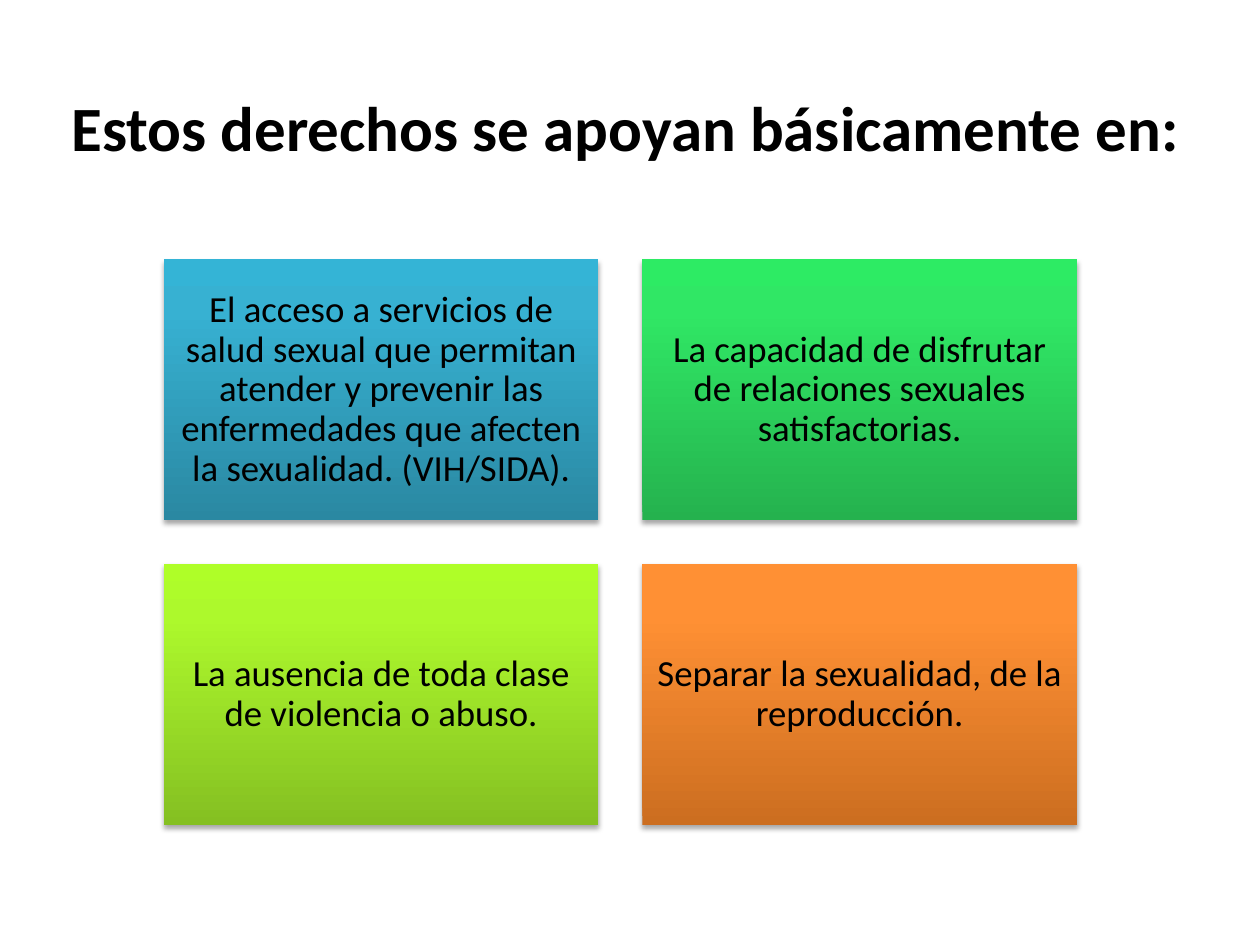
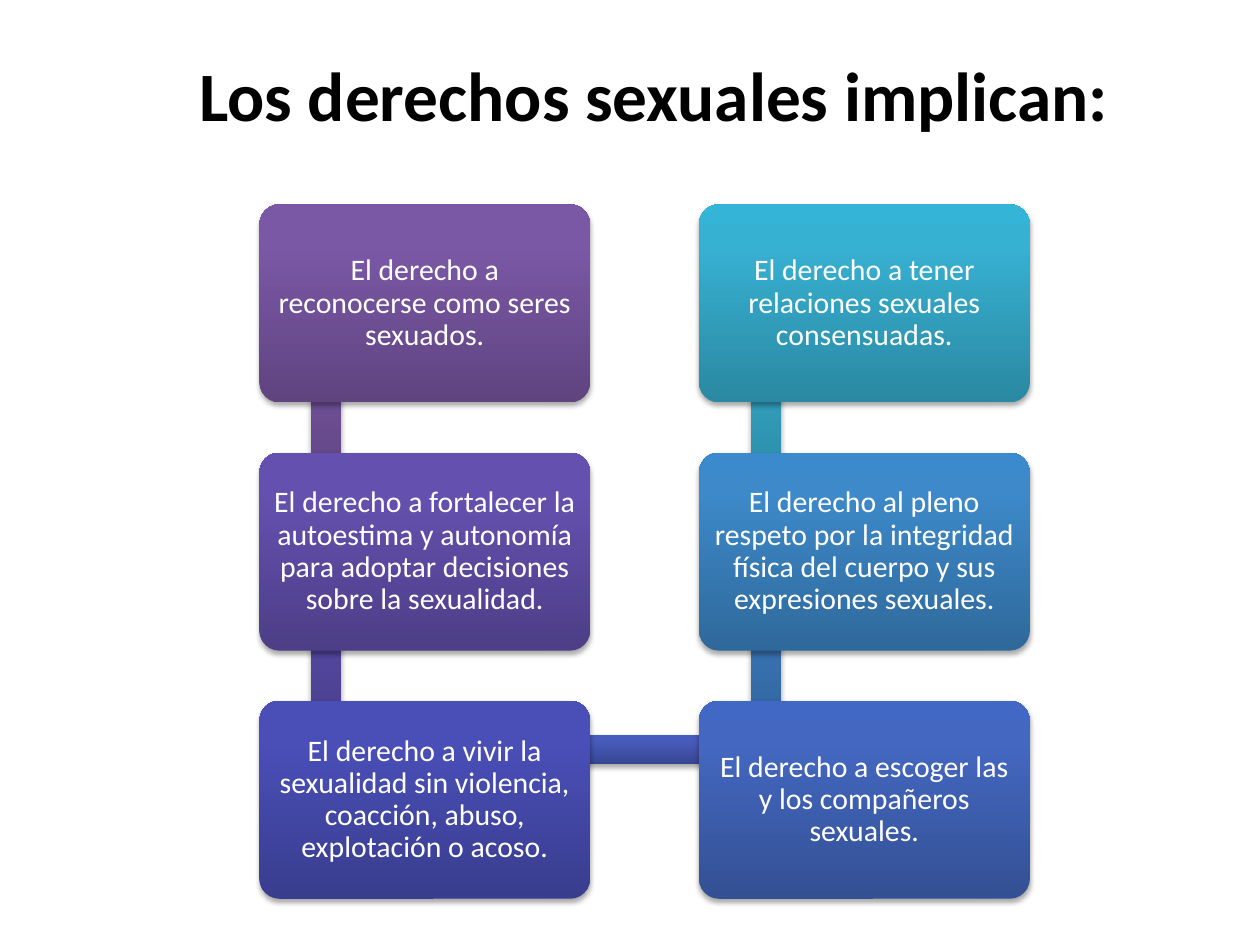
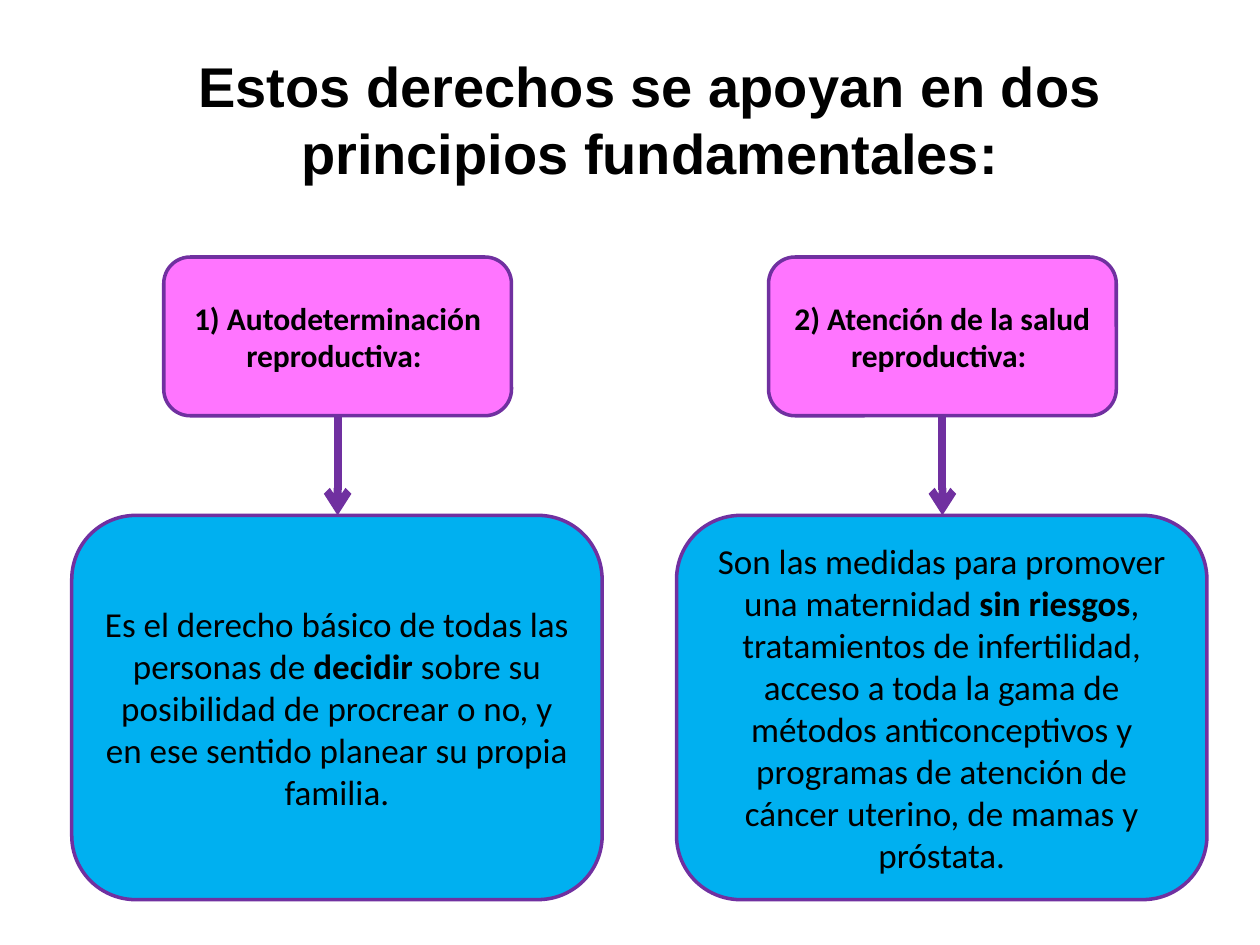
"""Build three slides on sexual and reproductive rights."""
from copy import deepcopy
from typing import NamedTuple

from pptx import Presentation
from pptx.dml.color import RGBColor
from pptx.enum.shapes import MSO_CONNECTOR, MSO_SHAPE
from pptx.enum.text import MSO_ANCHOR, MSO_AUTO_SIZE, PP_ALIGN
from pptx.oxml import parse_xml
from pptx.oxml.ns import nsdecls, qn
from pptx.util import Pt

COLOURS = {
    "black": "000000",
    "white": "FFFFFF",
    "purple": "7030A0",
    "pink": "FF75FF",
    "sky": "00B0F0",
}
GRADIENTS = {
    "teal": ("2A88A2", "37B1D2", "34B4D6"),
    "green": ("25B24E", "30E765", "2DEB64"),
    "lime": ("85C022", "ADF92C", "AFFE28"),
    "orange": ("CC6E20", "FF9034", "FF9136"),
    "plum": ("5F4480", "7B58A6", "7C57A8"),
    "violet": ("4D3E87", "6451AF", "6450B2"),
    "violet bar": ("483D89", "5D4FB1", "5C4EB4"),
    "indigo": ("393D8E", "4A4FB8", "484EBB"),
    "indigo bar": ("374691", "475BBC", "455ABF"),
    "cobalt": ("345094", "4468C1", "4168C4"),
    "blue bar": ("306399", "3F80C7", "3C80CB"),
    "blue": ("2F699B", "3D89C9", "3B8ACD"),
}
GRADIENT_POSITIONS = (0, 0.8, 1)


class Box(NamedTuple):
    left: float
    top: float
    width: float
    height: float

    def moved(self, across: float, down: float) -> "Box":
        return self._replace(left=self.left + across, top=self.top + down)


class Card(NamedTuple):
    text: str
    gradient: str


class Principle(NamedTuple):
    heading: str
    body: str
    bold_part: str


SUPPORTS = (
    Card("El acceso a servicios de salud sexual que permitan atender y prevenir "
         "las enfermedades que afecten la sexualidad. (VIH/SIDA).", "teal"),
    Card("La capacidad de disfrutar de relaciones sexuales satisfactorias.", "green"),
    Card("La ausencia de toda clase de violencia o abuso.", "lime"),
    Card("Separar la sexualidad, de la reproducción.", "orange"),
)
RIGHTS = (
    Card("El derecho a reconocerse como seres sexuados.", "plum"),
    Card("El derecho a fortalecer la autoestima y autonomía para adoptar "
         "decisiones sobre la sexualidad.", "violet"),
    Card("El derecho a vivir la sexualidad sin violencia, coacción, abuso, "
         "explotación o acoso.", "indigo"),
    Card("El derecho a escoger las y los compañeros sexuales.", "cobalt"),
    Card("El derecho al pleno respeto por la integridad física del cuerpo y sus "
         "expresiones sexuales.", "blue"),
    Card("El derecho a tener relaciones sexuales consensuadas.", "teal"),
)
PRINCIPLES = (
    Principle("1) Autodeterminación reproductiva: ",
              "Es el derecho básico de todas las personas de decidir sobre su "
              "posibilidad de procrear o no, y en ese sentido planear su propia familia.",
              "decidir"),
    Principle("2) Atención de la salud reproductiva: ",
              "Son las medidas para promover una maternidad sin riesgos, tratamientos "
              "de infertilidad, acceso a toda la gama de métodos anticonceptivos y "
              "programas de atención de cáncer uterino, de mamas y próstata.",
              "sin riesgos"),
)


def in_points(box: Box) -> list:
    return [Pt(length) for length in box]


def write_text(shape, text: str, *, size: float, colour: str = "black",
               font: str = "Calibri", bold: bool = False, bold_part: str = "",
               spacing: float = 1, inset: float = 7.2,
               anchor: MSO_ANCHOR = MSO_ANCHOR.MIDDLE) -> None:
    frame = shape.text_frame
    frame.word_wrap = True
    frame.auto_size = MSO_AUTO_SIZE.NONE
    frame.vertical_anchor = anchor
    frame.margin_left = frame.margin_right = Pt(inset)
    frame.margin_top = frame.margin_bottom = Pt(min(inset, 6.5) if inset < 7 else 3.6)
    para = frame.paragraphs[0]
    para.alignment = PP_ALIGN.CENTER
    para.line_spacing = spacing
    parts = text.partition(bold_part) if bold_part else (text,)
    for part in parts:
        span = para.add_run()
        span.text = part
        span.font.name = font
        span.font.size = Pt(size)
        span.font.bold = bold or part == bold_part
        span.font.color.rgb = RGBColor.from_string(COLOURS[colour])


def add_titled_page(deck, text: str, box: Box, *, size: float, font: str = "Calibri",
                    anchor: MSO_ANCHOR = MSO_ANCHOR.MIDDLE, space_below: float = 3.6):
    page = deck.slides.add_slide(deck.slide_layouts[5])
    title = page.shapes.title
    title.left, title.top, title.width, title.height = in_points(box)
    write_text(title, text, size=size, font=font, bold=True, anchor=anchor)
    title.text_frame.margin_bottom = Pt(space_below)
    return page


def add_gradient_shape(page, kind: MSO_SHAPE, box: Box, gradient: str):
    shape = page.shapes.add_shape(kind, *in_points(box))
    shape.line.fill.background()
    shape.fill.gradient()
    shape.fill.gradient_angle = 90
    stop_list = next(shape.element.spPr.iter(qn("a:gsLst")))
    stop_list.append(deepcopy(stop_list[-1]))
    for stop, position, colour in zip(shape.fill.gradient_stops, GRADIENT_POSITIONS,
                                      GRADIENTS[gradient]):
        stop.position = position
        stop.color.rgb = RGBColor.from_string(colour)
    shape.element.spPr.append(parse_xml(
        f'<a:effectLst {nsdecls("a")}><a:outerShdw blurRad="{Pt(3.1)}" dist="{Pt(1.8)}" '
        f'dir="5400000" rotWithShape="0"><a:srgbClr val="{COLOURS["black"]}">'
        '<a:alpha val="35000"/></a:srgbClr></a:outerShdw></a:effectLst>'))
    return shape


def add_outlined_box(page, box: Box, fill: str):
    shape = page.shapes.add_shape(MSO_SHAPE.ROUNDED_RECTANGLE, *in_points(box))
    shape.shadow.inherit = False
    shape.fill.solid()
    shape.fill.fore_color.rgb = RGBColor.from_string(COLOURS[fill])
    shape.line.color.rgb = RGBColor.from_string(COLOURS["purple"])
    shape.line.width = Pt(2)
    return shape


def add_down_arrow(page, across: float, start: float, end: float) -> None:
    arrow = page.shapes.add_connector(MSO_CONNECTOR.STRAIGHT, Pt(across), Pt(start),
                                      Pt(across), Pt(end))
    arrow.line.color.rgb = RGBColor.from_string(COLOURS["purple"])
    arrow.line.width = Pt(4.5)
    arrow.line._get_or_add_ln().append(parse_xml(f'<a:tailEnd {nsdecls("a")} type="arrow"/>'))
    arrow._element.spPr.append(parse_xml(f'<a:effectLst {nsdecls("a")}/>'))


def build_supports(deck) -> None:
    page = add_titled_page(deck, "Estos derechos se apoyan básicamente en:",
                           Box(8.6, 49, 697.7, 90), size=36, space_below=47)
    first = Box(93.6, 148.3, 248.4, 149)
    gap = 25
    for index, card in enumerate(SUPPORTS):
        row, column = divmod(index, 2)
        box = first.moved(column * (first.width + gap), row * (first.height + gap))
        shape = add_gradient_shape(page, MSO_SHAPE.RECTANGLE, box, card.gradient)
        write_text(shape, card.text, size=21, spacing=0.9, inset=6.5)


def build_rights(deck) -> None:
    page = add_titled_page(deck, "Los derechos sexuales implican:",
                           Box(36, 21.6, 675.4, 106.6), size=39.6, space_below=46)
    first = Box(148.3, 116.8, 188.9, 113.2)
    across, down = 251.2, 141.8
    upright = Box(first.left + 29.6, first.top + 28.8, 17, 141.1)
    level = Box(first.left + 38.9, first.top + 2 * down + 19.4, 250.6, 17)
    bars = (
        (upright, "plum"),
        (upright.moved(0, down), "violet bar"),
        (level, "indigo bar"),
        (upright.moved(across, down), "blue bar"),
        (upright.moved(across, 0), "teal"),
    )
    for box, gradient in bars:
        add_gradient_shape(page, MSO_SHAPE.RECTANGLE, box, gradient)
    for index, card in enumerate(RIGHTS):
        column, step = divmod(index, 3)
        row = 2 - step if column else step
        shape = add_gradient_shape(page, MSO_SHAPE.ROUNDED_RECTANGLE,
                                   first.moved(column * across, row * down), card.gradient)
        shape.adjustments[0] = 0.1
        write_text(shape, card.text, size=17, colour="white", spacing=0.9, inset=5)


def build_principles(deck) -> None:
    page = add_titled_page(deck, "Estos derechos se apoyan en dos principios fundamentales:",
                           Box(65.5, 25.9, 612, 85), size=32, font="Arial",
                           anchor=MSO_ANCHOR.TOP)
    heading_box = Box(93.6, 146.9, 198.7, 90.7)
    body_box = Box(41, 294.5, 303.1, 219.6)
    for index, principle in enumerate(PRINCIPLES):
        shift = index * 345.6
        heading = add_outlined_box(page, heading_box.moved(shift, 0), "pink")
        write_text(heading, principle.heading, size=18, bold=True)
        body = add_outlined_box(page, body_box.moved(shift, 0), "sky")
        write_text(body, principle.body, size=20, bold_part=principle.bold_part)
        add_down_arrow(page, heading_box.left + heading_box.width / 2 + shift,
                       heading_box.top + heading_box.height, body_box.top)


def main() -> None:
    deck = Presentation()
    deck.slide_width, deck.slide_height = Pt(720), Pt(540)
    build_supports(deck)
    build_rights(deck)
    build_principles(deck)
    deck.save("out.pptx")


if __name__ == "__main__":
    main()
